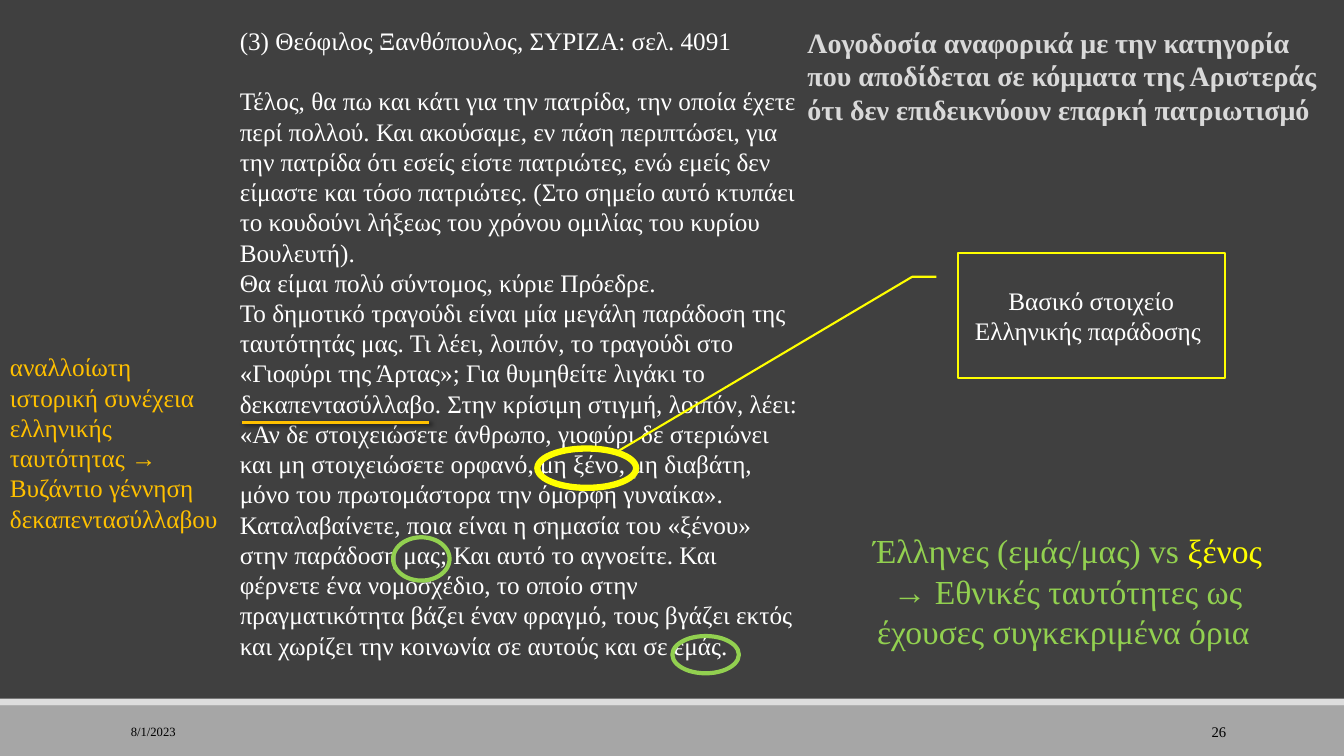
from lxml import etree
from pptx import Presentation
from pptx import util as u
from pptx.dml.color import RGBColor
from pptx.enum import shapes, text
from pptx.oxml import parse_xml
from pptx.oxml.ns import nsdecls, qn

WHITE, BLACK, YELLOW = "FFFFFF", "000000", "FFFF00"
AMBER, GREEN = "FFC000", "92D050"
LEFT, CENTER, RIGHT = (text.PP_ALIGN.LEFT, text.PP_ALIGN.CENTER,
                       text.PP_ALIGN.RIGHT)
TOP, MIDDLE = text.MSO_ANCHOR.TOP, text.MSO_ANCHOR.MIDDLE
SHAPE = shapes.MSO_SHAPE


def color(code):
    return RGBColor.from_string(code)


class Page:
    """One slide; every place is given in percent of its width and height."""

    font = "Times New Roman"

    def __init__(self, deck, background):
        self.width, self.height = deck.slide_width, deck.slide_height
        self.slide = deck.slides.add_slide(deck.slide_layouts[5])
        fill = self.slide.background.fill
        fill.solid()
        fill.fore_color.rgb = color(background)

    def place(self, x, y, *size):
        sides = (self.width, self.height) * 2
        return [round(side * share / 100)
                for side, share in zip(sides, (x, y, *size))]

    def set_text(self, box, paragraphs, size, ink, align=LEFT, anchor=TOP,
                 bold=False, gap=None):
        """Each paragraph is a list of (words, colour or None) pieces."""
        frame = box.text_frame
        frame.word_wrap = True
        frame.auto_size = text.MSO_AUTO_SIZE.NONE
        frame.vertical_anchor = anchor
        for index, pieces in enumerate(paragraphs):
            para = frame.add_paragraph() if index else frame.paragraphs[0]
            para.alignment = align
            para.space_before = u.Pt(gap if gap and index == 1 else 0)
            for words, tint in pieces:
                span = para.add_run()
                span.text = words
                span.font.name = self.font
                span.font.size = u.Pt(size)
                span.font.bold = bold
                span.font.color.rgb = color(tint or ink)

    def title(self, area, words, size, ink):
        box = self.slide.shapes.title
        box.left, box.top, box.width, box.height = self.place(*area)
        self.set_text(box, [[(words, None)]], size, ink, bold=True)

    def label(self, area, paragraphs, size, ink, **style):
        box = self.slide.shapes.add_textbox(*self.place(*area))
        self.set_text(box, paragraphs, size, ink, **style)

    def shape(self, kind, area, fill=None, line=None, weight=1):
        shape = self.slide.shapes.add_shape(kind, *self.place(*area))
        shape.shadow.inherit = False
        if fill:
            shape.fill.solid()
            shape.fill.fore_color.rgb = color(fill)
        else:
            shape.fill.background()
        if line:
            shape.line.color.rgb = color(line)
            shape.line.width = u.Pt(weight)
        else:
            shape.line.fill.background()
        return shape

    def callout(self, area, bends, words, size, ink, line, weight):
        box = self.shape(SHAPE.LINE_CALLOUT_2, area, line=line, weight=weight)
        for index, bend in enumerate(bends):
            box.adjustments[index] = bend
        self.set_text(box, [[(words, None)]], size, ink, CENTER, MIDDLE)

    def underline(self, x, y, end, ink, weight):
        line = self.slide.shapes.add_connector(
            shapes.MSO_CONNECTOR.STRAIGHT, *self.place(x, y, end, y))
        line.line.color.rgb = color(ink)
        line.line.width = u.Pt(weight)
        effects = parse_xml(f"<a:effectLst {nsdecls('a')}/>")
        shadow = etree.SubElement(effects, qn("a:outerShdw"),
                                  blurRad=str(u.Pt(3)), dist=str(u.Pt(2)),
                                  dir=str(45 * 60000))
        shade = etree.SubElement(shadow, qn("a:srgbClr"), val=BLACK)
        etree.SubElement(shade, qn("a:alpha"), val="60000")
        line._element.spPr.append(effects)


SPEECH = [
    "(3) Θεόφιλος Ξανθόπουλος, ΣΥΡΙΖΑ: σελ. 4091",
    "Τέλος, θα πω και κάτι για την πατρίδα, την οποία έχετε περί πολλού. "
    "Και ακούσαμε, εν πάση περιπτώσει, για την πατρίδα ότι εσείς είστε "
    "πατριώτες, ενώ εμείς δεν είμαστε και τόσο πατριώτες. (Στο σημείο αυτό "
    "κτυπάει το κουδούνι λήξεως του χρόνου ομιλίας του κυρίου Βουλευτή).",
    "Θα είμαι πολύ σύντομος, κύριε Πρόεδρε.",
    "Το δημοτικό τραγούδι είναι μία μεγάλη παράδοση της ταυτότητάς μας. "
    "Τι λέει, λοιπόν, το τραγούδι στο «Γιοφύρι της Άρτας»; Για θυμηθείτε "
    "λιγάκι το δεκαπεντασύλλαβο. Στην κρίσιμη στιγμή, λοιπόν, λέει: «Αν δε "
    "στοιχειώσετε άνθρωπο, γιοφύρι δε στεριώνει και μη στοιχειώσετε ορφανό, "
    "μη ξένο, μη διαβάτη, μόνο του πρωτομάστορα την όμορφη γυναίκα». "
    "Καταλαβαίνετε, ποια είναι η σημασία του «ξένου» στην παράδοση μας; Και "
    "αυτό το αγνοείτε. Και φέρνετε ένα νομοσχέδιο, το οποίο στην "
    "πραγματικότητα βάζει έναν φραγμό, τους βγάζει εκτός και χωρίζει την "
    "κοινωνία σε αυτούς και σε εμάς.",
]


def main():
    deck = Presentation()
    deck.slide_width, deck.slide_height = u.Inches(13.33), u.Inches(7.5)
    page = Page(deck, "404040")

    # Footer
    page.shape(SHAPE.RECTANGLE, (0, 93.33, 100, 6.67), fill="A6A6A6")
    page.shape(SHAPE.RECTANGLE, (0, 92.4, 100, 0.93), fill="DDDDDD")
    page.label((9, 94.13, 20.25, 5.33), [[("8/1/2023", None)]], 9, BLACK,
               anchor=MIDDLE)
    page.label((81.25, 94.13, 10.73, 5.33), [[("26", None)]], 10.5, BLACK,
               align=RIGHT, anchor=MIDDLE)

    # Speech extract
    page.label((17.1, 2.67, 43.2, 86.13),
               [[(words, None)] for words in SPEECH], 18, WHITE, gap=21.6)

    # Marks on the extract
    page.underline(18, 55.87, 31.95, AMBER, 2)
    for area, ink, weight in (
            ((39.98, 59.33, 7.35, 5.2), YELLOW, 4.5),
            ((29.25, 71.07, 4.2, 5.73), GREEN, 3),
            ((50.03, 84.13, 4.95, 4.93), GREEN, 3)):
        page.shape(SHAPE.OVAL, area, line=ink, weight=weight)

    # Title and comments
    page.title((59.33, 2.67, 40.28, 14.8),
               "Λογοδοσία αναφορικά με την κατηγορία που αποδίδεται σε κόμματα "
               "της Αριστεράς ότι δεν επιδεικνύουν επαρκή πατριωτισμό",
               20, "D9D9D9")
    page.label((0, 45.87, 17.1, 25.6),
               [[("αναλλοίωτη ιστορική συνέχεια ελληνικής ταυτότητας → "
                  "Βυζάντιο γέννηση δεκαπεντασύλλαβου", None)]], 18, AMBER)
    page.callout((71.25, 33.47, 19.88, 16.53),
                 (0.19, -0.08, 0.19, -0.17, 1.61, -1.29),
                 "Βασικό στοιχείο Ελληνικής παράδοσης ", 18, WHITE, YELLOW, 1.5)
    page.label((63.68, 69.47, 31.5, 17.47),
               [[("Έλληνες (εμάς/μας) vs ", None), ("ξένος", YELLOW),
                 (" → Εθνικές ταυτότητες ως έχουσες συγκεκριμένα όρια ", None)]],
               24, GREEN, align=CENTER)

    deck.save("out.pptx")


if __name__ == "__main__":
    main()
